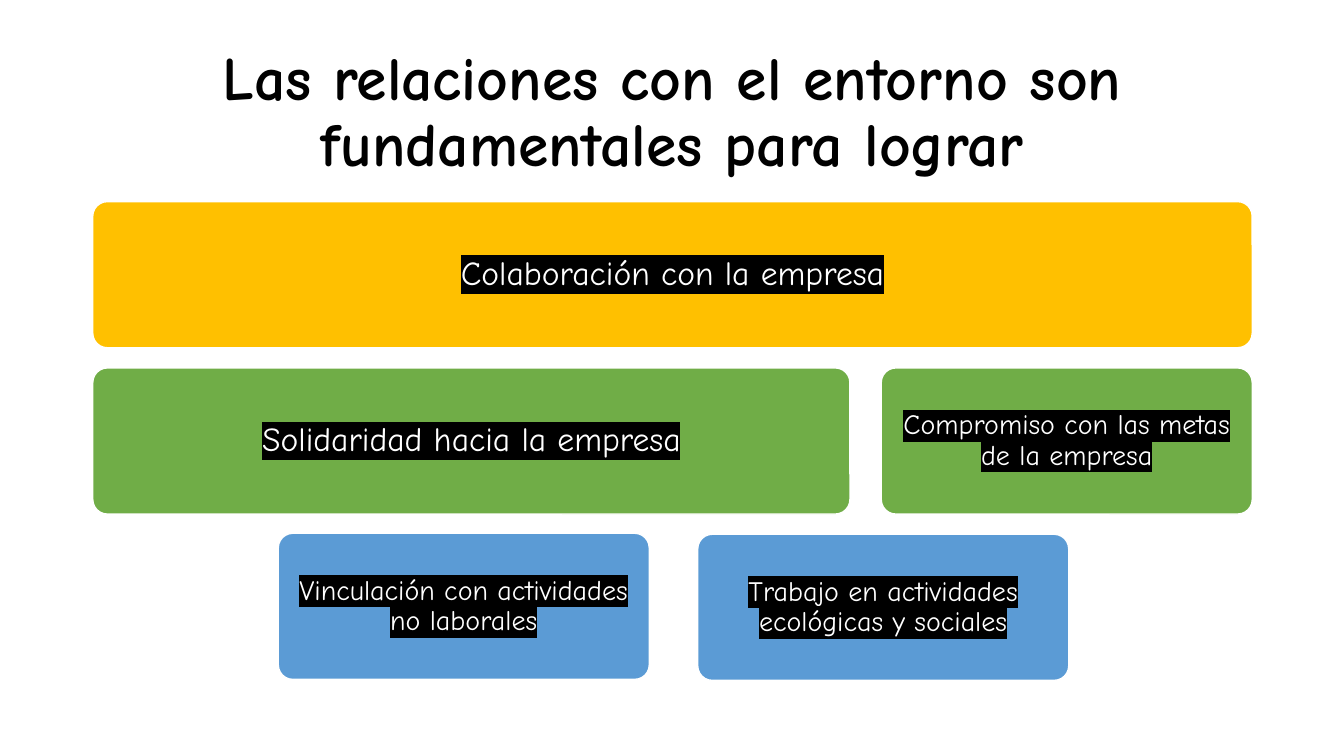
"""Build a slide with a title and rows of rounded goal cards."""
from dataclasses import dataclass

import pptx
import pptx.dml.color
import pptx.enum.shapes
import pptx.enum.text
import pptx.oxml
import pptx.oxml.ns
import pptx.util
from pptx.util import Inches

FONT = "Comic Neue"
BLACK, WHITE = "000000", "FFFFFF"
AMBER, GREEN, BLUE = "FFC000", "70AD47", "5B9BD5"
LEFT, FULL_WIDTH, NARROW_WIDTH = 0.92, 11.5, 3.68
CARD_HEIGHT = 1.45
TOP_ROW, MIDDLE_ROW, BOTTOM_ROW = 2, 3.65, 5.29


@dataclass
class Card:
    text: str
    left: float
    top: float
    width: float
    fill: str
    size: int = 20
    inset: float = 0.08


CARDS = [
    Card("Colaboración con la empresa", LEFT, TOP_ROW, FULL_WIDTH, AMBER, 24, 0.1),
    Card("Solidaridad hacia la empresa", LEFT, MIDDLE_ROW, 7.51, GREEN, 24, 0.1),
    Card("Vinculación con actividades no laborales", 2.76, BOTTOM_ROW, NARROW_WIDTH, BLUE),
    Card("Trabajo en actividades ecológicas y sociales", 6.92, BOTTOM_ROW + 0.01, NARROW_WIDTH, BLUE),
    Card("Compromiso con las metas de la empresa", LEFT + FULL_WIDTH - NARROW_WIDTH, MIDDLE_ROW,
         NARROW_WIDTH, GREEN),
]


def rgb(value: str) -> pptx.dml.color.RGBColor:
    return pptx.dml.color.RGBColor.from_string(value)


def write(shape, text: str, size: int, color: str, bold: bool = False):
    frame = shape.text_frame
    frame.word_wrap = True
    frame.vertical_anchor = pptx.enum.text.MSO_ANCHOR.MIDDLE
    paragraph = frame.paragraphs[0]
    paragraph.alignment = pptx.enum.text.PP_ALIGN.CENTER
    paragraph.line_spacing = 0.9
    run = paragraph.add_run()
    run.text = text
    run.font.name = FONT
    run.font.size = pptx.util.Pt(size)
    run.font.bold = bold
    run.font.color.rgb = rgb(color)
    return run


def highlight(run, color: str) -> None:
    namespace = pptx.oxml.ns.nsdecls("a")
    element = pptx.oxml.parse_xml(f'<a:highlight {namespace}><a:srgbClr val="{color}"/></a:highlight>')
    run.font.fill._xPr.find(pptx.oxml.ns.qn("a:solidFill")).addnext(element)


def add_title(slide, text: str) -> None:
    title = slide.shapes.title
    title.left, title.top = Inches(LEFT), Inches(0.4)
    title.width, title.height = Inches(FULL_WIDTH), Inches(CARD_HEIGHT)
    write(title, text, 44, BLACK, bold=True)


def add_card(slide, card: Card) -> None:
    shape = slide.shapes.add_shape(
        pptx.enum.shapes.MSO_SHAPE.ROUNDED_RECTANGLE,
        Inches(card.left), Inches(card.top), Inches(card.width), Inches(CARD_HEIGHT))
    shape.adjustments[0] = 0.1
    shape.shadow.inherit = False
    shape.fill.solid()
    shape.fill.fore_color.rgb = rgb(card.fill)
    shape.line.color.rgb = rgb(WHITE)
    shape.line.width = pptx.util.Pt(1)
    frame = shape.text_frame
    frame.margin_left = frame.margin_right = Inches(card.inset)
    frame.margin_top = frame.margin_bottom = Inches(card.inset)
    highlight(write(shape, card.text, card.size, WHITE), BLACK)


def main() -> None:
    presentation = pptx.Presentation()
    presentation.slide_width, presentation.slide_height = Inches(13.33), Inches(7.5)
    slide = presentation.slides.add_slide(presentation.slide_layouts.get_by_name("Title Only"))
    add_title(slide, "Las relaciones con el entorno son fundamentales para lograr")
    for card in CARDS:
        add_card(slide, card)
    presentation.save("out.pptx")


if __name__ == "__main__":
    main()
